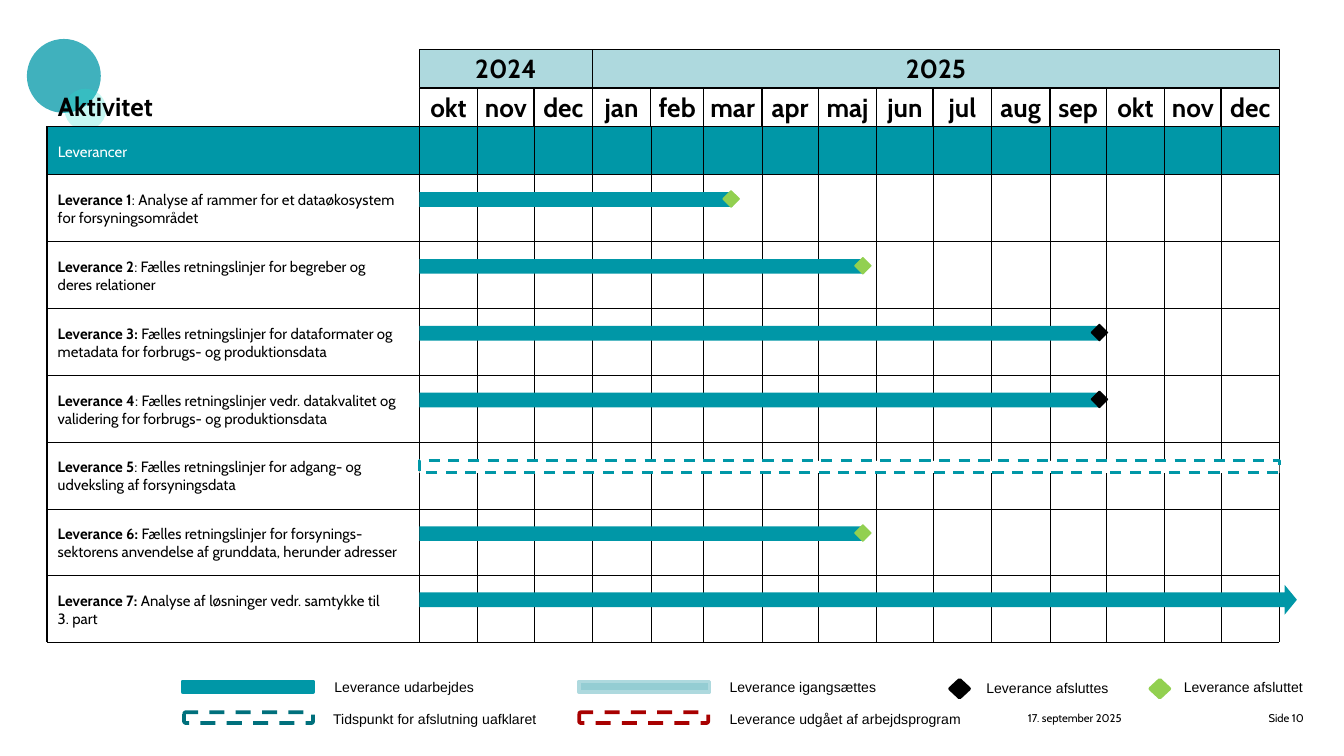
from itertools import accumulate

from lxml import etree
from pptx import Presentation
from pptx import util as u
from pptx.dml.color import RGBColor
from pptx.enum import dml, shapes, text
from pptx.oxml.ns import qn

EMU_PER_PX = 9144  # 100 px to the inch
COLORS = {
    "teal": "0097A7", "dark_teal": "00707C", "mint": "1DE2CD",
    "pale": "AED9DE", "mid": "94CDD3", "green": "92D050",
    "red": "A80000", "black": "000000", "white": "FFFFFF",
}
HEADING = {"name": "Cabin", "size": u.Pt(14), "bold": True}
BODY = {"name": "Cabin", "size": u.Pt(8), "bold": False}
FOOTER = {"name": "Cabin", "size": u.Pt(6)}
LEGEND = {"name": "Arial", "size": u.Pt(7.5)}
TIGHT = {"margin_left": 0, "margin_right": 0, "margin_top": 0,
         "margin_bottom": 0, "word_wrap": False}
CELL = {**TIGHT, "margin_top": u.Pt(2), "margin_bottom": u.Pt(2),
        "vertical_anchor": text.MSO_ANCHOR.MIDDLE}

TABLE_LEFT, CHART_LEFT, CHART_RIGHT = 35, 312, 952
YEAR_TOP, MONTH_TOP, BAND_TOP, ROWS_TOP, TABLE_BOTTOM = 37, 66, 94, 130, 478
LABEL_LEFT = 43

MONTHS = [("okt", 31), ("nov", 30), ("dec", 31), ("jan", 31), ("feb", 28),
          ("mar", 31), ("apr", 30), ("maj", 31), ("jun", 30), ("jul", 31),
          ("aug", 31), ("sep", 30), ("okt", 31), ("nov", 30), ("dec", 31)]
YEARS = [("2024", 0, 3), ("2025", 3, 15)]

# bold lead, rest of first line, second line, kind of bar, bar end
DELIVERIES = [
    ("Leverance 1", ": Analyse af rammer for et dataøkosystem",
     "for forsyningsområdet", "green", 545),
    ("Leverance 2", ": Fælles retningslinjer for begreber og",
     "deres relationer", "green", 643),
    ("Leverance 3: ", "Fælles retningslinjer for dataformater og",
     "metadata for forbrugs- og produktionsdata", "black", 819),
    ("Leverance 4", ": Fælles retningslinjer vedr. datakvalitet og",
     "validering for forbrugs- og produktionsdata", "black", 819),
    ("Leverance 5", ": Fælles retningslinjer for adgang- og",
     "udveksling af forsyningsdata", "undated", CHART_RIGHT),
    ("Leverance 6: ", "Fælles retningslinjer for forsynings-",
     "sektorens anvendelse af grunddata, herunder adresser", "green", 643),
    ("Leverance 7: ", "Analyse af løsninger vedr. samtykke til",
     "3. part", "arrow", 965),
]

# symbol, symbol box, fill, line, dashed, label, label left, label top, width
LEGEND_ITEMS = [
    ("RECTANGLE", (136, 507, 97, 8), "teal", "teal", False,
     "Leverance udarbejdes", 239, 500, 127),
    ("ROUNDED_RECTANGLE", (137, 530, 96, 8), "white", "dark_teal", True,
     "Tidspunkt for afslutning uafklaret", 238, 524, 177),
    ("RECTANGLE", (431, 507, 97, 8), "mid", "pale", False,
     "Leverance igangsættes", 533, 500, 177),
    ("ROUNDED_RECTANGLE", (431, 530, 96, 8), "white", "red", True,
     "Leverance udgået af arbejdsprogram", 533, 524, 198),
    ("DIAMOND", (707, 506, 14, 13), "black", "black", False,
     "Leverance afsluttes", 724, 501, 127),
    ("DIAMOND", (856, 506, 14, 13), "green", "green", False,
     "Leverance afsluttet", 871, 500, 177),
]


def px(*lengths):
    return [u.Emu(round(length * EMU_PER_PX)) for length in lengths]


def rgb(name):
    return RGBColor.from_string(COLORS[name])


def set_format(target, values):
    for attribute, value in values.items():
        setattr(target, attribute, value)


def write(paragraph, content, font, color="black"):
    run = paragraph.add_run()
    run.text = content
    set_format(run.font, font)
    run.font.color.rgb = rgb(color)


def add_shape(slide, kind, box, fill=None, line=None, weight=0.75, dashed=False):
    shape = slide.shapes.add_shape(getattr(shapes.MSO_SHAPE, kind), *px(*box))
    shape.shadow.inherit = False
    if fill:
        shape.fill.solid()
        shape.fill.fore_color.rgb = rgb(fill)
    else:
        shape.fill.background()
    if line:
        shape.line.color.rgb = rgb(line)
        shape.line.width = u.Pt(weight)
        if dashed:
            shape.line.dash_style = dml.MSO_LINE.DASH
    else:
        shape.line.fill.background()
    return shape


def add_circle(slide, box, color, opacity):
    circle = add_shape(slide, "OVAL", box, color)
    tint = circle._element.spPr.find(qn("a:solidFill"))[0]
    etree.SubElement(tint, qn("a:alpha")).set("val", str(opacity * 1000))


def add_text(slide, box, frame_format):
    frame = slide.shapes.add_textbox(*px(*box)).text_frame
    set_format(frame, frame_format)
    return frame


def add_heading_cell(slide, label, left, right, top, fill=None):
    cell = add_shape(slide, "RECTANGLE", (left, top, right - left, 28), fill, "black")
    set_format(cell.text_frame, CELL)
    paragraph = cell.text_frame.paragraphs[0]
    paragraph.alignment = text.PP_ALIGN.CENTER
    write(paragraph, label, HEADING)


def add_rule(slide, start, end, weight):
    rule = slide.shapes.add_connector(shapes.MSO_CONNECTOR.STRAIGHT, *px(*start, *end))
    rule.line.color.rgb = rgb("black")
    rule.line.width = u.Pt(weight)
    etree.SubElement(rule._element.spPr, qn("a:effectLst"))


def add_title(slide, content):
    title = slide.shapes.title
    slide.shapes._spTree.append(title._element)  # in front of the circles
    set_format(title, dict(zip(("left", "top", "width", "height"),
                               px(LABEL_LEFT, 68, 80, 23))))
    set_format(title.text_frame, {**TIGHT, "auto_size": text.MSO_AUTO_SIZE.NONE,
                                  "vertical_anchor": text.MSO_ANCHOR.BOTTOM})
    paragraph = title.text_frame.paragraphs[0]
    paragraph.alignment = text.PP_ALIGN.LEFT
    write(paragraph, content, HEADING)


def add_grid(slide, columns, rows):
    for x in [TABLE_LEFT, *columns]:
        weight = 0.75 if x in (TABLE_LEFT, columns[0], columns[-1]) else 0.25
        add_rule(slide, (x, BAND_TOP), (x, TABLE_BOTTOM), weight)
    for y in [BAND_TOP, *rows]:
        weight = 0.75 if y in (BAND_TOP, rows[-1]) else 0.25
        add_rule(slide, (TABLE_LEFT, y), (CHART_RIGHT, y), weight)


def add_delivery(slide, top, lead, first_line, second_line, kind, end):
    """Put one row's bar, its end mark and its label below the row's top."""
    length = end - CHART_LEFT
    if kind == "undated":
        add_shape(slide, "RECTANGLE", (CHART_LEFT, top + 14, length, 9),
                  "white", "teal", 1.5, True)
    elif kind == "arrow":
        arrow = add_shape(slide, "RIGHT_ARROW", (CHART_LEFT, top + 7, length, 22), "teal")
        arrow.adjustments[1] = 0.41
    else:
        add_shape(slide, "RECTANGLE", (CHART_LEFT, top + 13, length, 11), "teal")
        add_shape(slide, "DIAMOND", (end - 7, top + 12, 12, 12), kind, kind)
    label = add_text(slide, (LABEL_LEFT, top + 12, 260, 27), TIGHT)
    write(label.paragraphs[0], lead, {**BODY, "bold": True})
    write(label.paragraphs[0], first_line, BODY)
    write(label.add_paragraph(), second_line, BODY)


def add_legend_item(slide, kind, box, fill, line, dashed, label, left, top, width):
    add_shape(slide, kind, box, fill, line, 2, dashed)
    frame = add_text(slide, (left, top, width, 23), {"word_wrap": True})
    write(frame.paragraphs[0], label, LEGEND)


def add_footer(slide, box, content, alignment):
    paragraph = add_text(slide, box, {"word_wrap": True}).paragraphs[0]
    paragraph.alignment = alignment
    write(paragraph, content, FOOTER)


def main():
    deck = Presentation()
    deck.slide_width, = px(1000)
    deck.slide_height = u.Emu(deck.slide_width * 9 // 16)
    slide = deck.slides.add_slide(deck.slide_layouts.get_by_name("Title Only"))

    add_circle(slide, (20, 29, 55, 55), "teal", 75)
    add_circle(slide, (48, 66, 31, 31), "mint", 25)
    add_footer(slide, (755, 524, 135, 30), "17. september 2025", text.PP_ALIGN.LEFT)
    add_footer(slide, (892, 524, 88, 30), "Side 10", text.PP_ALIGN.RIGHT)

    days = list(accumulate((count for _, count in MONTHS), initial=0))
    columns = [CHART_LEFT + (CHART_RIGHT - CHART_LEFT) * day / days[-1] for day in days]
    row_height = (TABLE_BOTTOM - ROWS_TOP) / len(DELIVERIES)
    rows = [ROWS_TOP + row_height * i for i in range(len(DELIVERIES) + 1)]

    add_shape(slide, "RECTANGLE", (TABLE_LEFT, BAND_TOP, CHART_RIGHT - TABLE_LEFT,
                                   ROWS_TOP - BAND_TOP), "teal")
    for year, first, last in YEARS:
        add_heading_cell(slide, year, columns[first], columns[last], YEAR_TOP, "pale")
    for (month, _), left, right in zip(MONTHS, columns, columns[1:]):
        add_heading_cell(slide, month, left, right, MONTH_TOP)
    add_grid(slide, columns, rows)

    add_title(slide, "Aktivitet")
    band_label = add_text(slide, (LABEL_LEFT, 106, 52, 13), TIGHT)
    write(band_label.paragraphs[0], "Leverancer", BODY, "white")
    for top, delivery in zip(rows, DELIVERIES):
        add_delivery(slide, top, *delivery)
    for item in LEGEND_ITEMS:
        add_legend_item(slide, *item)

    deck.save("out.pptx")


if __name__ == "__main__":
    main()
